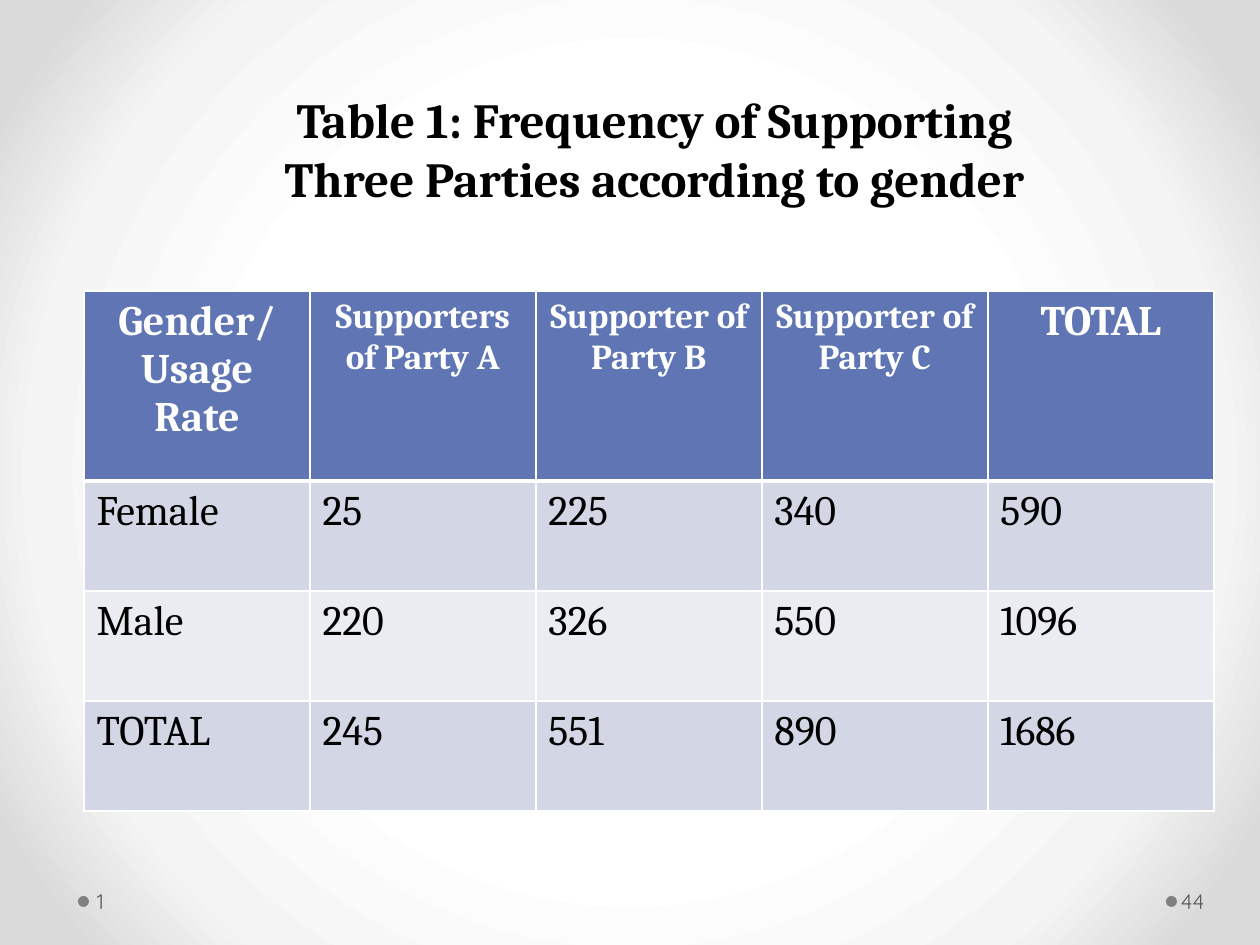
from lxml import etree
from pptx import Presentation
from pptx.dml.color import RGBColor
from pptx.enum.shapes import MSO_SHAPE
from pptx.enum.text import MSO_ANCHOR, MSO_AUTO_SIZE, PP_ALIGN
from pptx.oxml import parse_xml
from pptx.oxml.ns import nsdecls, qn
from pptx.util import Emu, Pt

OVAL = MSO_SHAPE.OVAL
TOP, MIDDLE = MSO_ANCHOR.TOP, MSO_ANCHOR.MIDDLE
GROW = MSO_AUTO_SIZE.SHAPE_TO_FIT_TEXT
LEFT, CENTER = PP_ALIGN.LEFT, PP_ALIGN.CENTER

WHITE = RGBColor(0xFF, 0xFF, 0xFF)
BLACK = RGBColor(0, 0, 0)
SILVER = RGBColor(0xF4, 0xF4, 0xF4)
LIGHT_GRAY = RGBColor(0xDA, 0xDA, 0xDA)
GRAY = RGBColor(0x80, 0x80, 0x80)
DARK_GRAY = RGBColor(0x59, 0x59, 0x59)
BLUE = RGBColor(0x60, 0x76, 0xB4)
BAND_DARK = RGBColor(0xD2, 0xD6, 0xE5)
BAND_LIGHT = RGBColor(0xEA, 0xEC, 0xF2)

SERIF = "Cambria"
SANS = "Quicksand"
TITLE_ONLY = 5

HEADERS = [
    ("Gender/ Usage Rate", 24),
    ("Supporters of Party A", 20),
    ("Supporter of Party B", 20),
    ("Supporter of Party C", 20),
    ("TOTAL", 24),
]
ROWS = [
    ("Female", 25, 225, 340, 590),
    ("Male", 220, 326, 550, 1096),
    ("TOTAL", 245, 551, 890, 1686),
]


def px(n):
    return Emu(round(n * 914400 / 126))


class Deck:
    def __init__(self):
        self.prs = Presentation()
        self.prs.slide_width, self.prs.slide_height = px(1260), px(945)
        self.s = self.prs.slides.add_slide(self.prs.slide_layouts[TITLE_ONLY])

    def background(self, stops):
        gs = "".join(
            f'<a:gs pos="{pos * 1000}"><a:srgbClr val="{color}"/></a:gs>'
            for pos, color in stops
        )
        bg = parse_xml(
            f'<p:bg {nsdecls("p", "a")}><p:bgPr><a:gradFill rotWithShape="1">'
            f'<a:gsLst>{gs}</a:gsLst><a:path path="circle">'
            '<a:fillToRect l="50000" t="50000" r="50000" b="50000"/></a:path>'
            '</a:gradFill><a:effectLst/></p:bgPr></p:bg>'
        )
        self.s.element.cSld.insert(0, bg)

    def set_text(self, tf, text, size, font, color, bold=False, align=LEFT):
        tf.text = text
        p = tf.paragraphs[0]
        p.alignment = align
        f = p.runs[0].font
        f.size, f.name, f.bold = Pt(size), font, bold
        f.color.rgb = color

    def title(self, text, x, y, w, h):
        sp = self.s.shapes.title
        sp.left, sp.top, sp.width, sp.height = map(px, (x, y, w, h))
        tf = sp.text_frame
        tf.word_wrap, tf.auto_size, tf.vertical_anchor = True, GROW, TOP
        self.set_text(tf, text, 28, SERIF, BLACK, True, CENTER)

    def dot(self, x, y, d):
        sp = self.s.shapes.add_shape(OVAL, px(x), px(y), px(d), px(d))
        sp.shadow.inherit = False
        sp.fill.solid()
        sp.fill.fore_color.rgb = GRAY
        sp.line.fill.background()

    def label(self, text, x, y, w, h, inset):
        sp = self.s.shapes.add_textbox(px(x), px(y), px(w), px(h))
        tf = sp.text_frame
        tf.word_wrap, tf.vertical_anchor = True, MIDDLE
        tf.margin_left = px(inset)
        tf.margin_right = px(6)
        self.set_text(tf, text, 12, SANS, DARK_GRAY)

    def borders(self, cell, bottom):
        tcPr = cell._tc.get_or_add_tcPr()
        for i, side in enumerate(("lnL", "lnR", "lnT", "lnB")):
            width = bottom if side == "lnB" else 1
            ln = etree.Element(qn(f"a:{side}"), w=str(Pt(width)))
            fill = etree.SubElement(ln, qn("a:solidFill"))
            etree.SubElement(fill, qn("a:srgbClr"), val=str(WHITE))
            tcPr.insert(i, ln)

    def cell(self, cell, text, size, fill, color, bold, align, bottom):
        cell.fill.solid()
        cell.fill.fore_color.rgb = fill
        self.set_text(cell.text_frame, text, size, SERIF, color, bold, align)
        self.borders(cell, bottom)

    def table(self, headers, rows, x, y, col_w, head_h, row_h):
        n_rows, n_cols = len(rows) + 1, len(headers)
        table = self.s.shapes.add_table(
            n_rows, n_cols, px(x), px(y),
            px(col_w * n_cols), px(head_h + row_h * len(rows)),
        ).table
        for col in table.columns:
            col.width = px(col_w)
        for i, row in enumerate(table.rows):
            row.height = px(row_h if i else head_h)
        for j, (text, size) in enumerate(headers):
            self.cell(table.cell(0, j), text, size, BLUE, WHITE, True, CENTER, 3)
        for i, values in enumerate(rows, 1):
            band = BAND_DARK if i % 2 else BAND_LIGHT
            for j, value in enumerate(values):
                self.cell(table.cell(i, j), str(value), 24, band, BLACK, False, LEFT, 1)


def main():
    deck = Deck()
    deck.background([(50, WHITE), (76, SILVER), (92, LIGHT_GRAY)])
    for x in (1166, 78):
        deck.dot(x, 896, 11)
    deck.table(HEADERS, ROWS, 84, 291, 226, 190, 110)
    deck.title(
        "Table 1: Frequency of Supporting Three Parties according to gender",
        223, 83, 863, 131,
    )
    deck.label("44", 1177, 876, 77, 50, 4)
    deck.label("1", 91, 876, 392, 50, 6)
    deck.prs.save("out.pptx")


if __name__ == "__main__":
    main()
